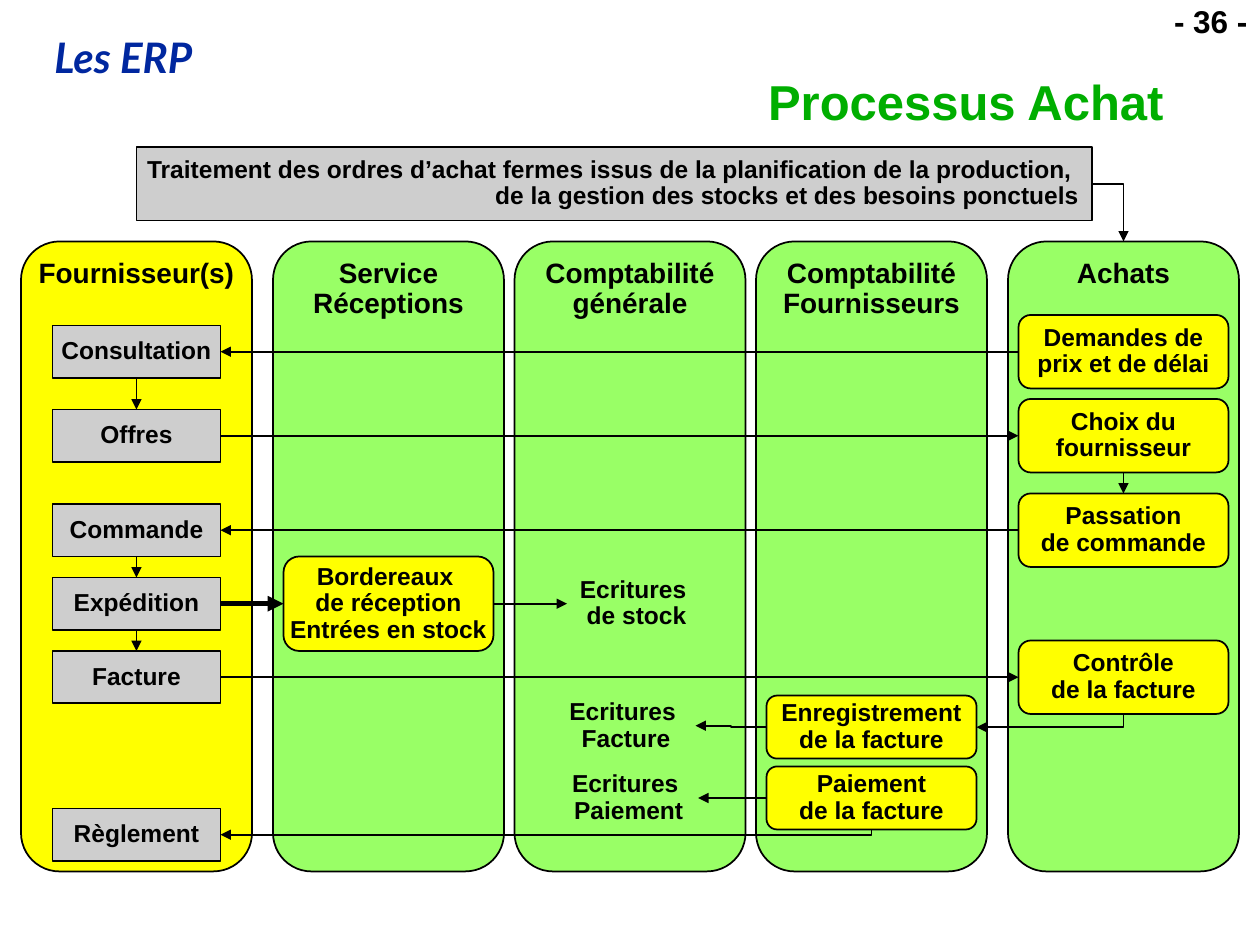
from lxml.etree import SubElement
from pptx import Presentation
from pptx.dml.color import RGBColor
from pptx.enum.shapes import MSO_CONNECTOR as LINK, MSO_SHAPE as SHAPE
from pptx.enum.text import MSO_ANCHOR as ANCHOR, MSO_AUTO_SIZE as AUTO, PP_ALIGN as ALIGN
from pptx.oxml.ns import qn
from pptx.util import Emu, Pt

PX = 9525
BLACK = RGBColor(0x00, 0x00, 0x00)
NAVY = RGBColor(0x00, 0x27, 0x9F)
GREEN = RGBColor(0x00, 0xAE, 0x00)
LIME = RGBColor(0x99, 0xFF, 0x66)
YELLOW = RGBColor(0xFF, 0xFF, 0x00)
GREY = RGBColor(0xCE, 0xCE, 0xCE)
TOP, LEFT, BOTTOM, RIGHT = range(4)

COLUMNS = [
    (16, "Fournisseur(s)", YELLOW),
    (208, "Service\vRéceptions", LIME),
    (392, "Comptabilité\vgénérale", LIME),
    (576, "Comptabilité\vFournisseurs", LIME),
    (768, "Achats", LIME),
]
SUPPLIER_STEPS = [
    ("Consultation", 248), ("Offres", 312), ("Commande", 384),
    ("Expédition", 440), ("Facture", 496), ("Règlement", 616),
]
PURCHASING_STEPS = [
    ("Demandes de\vprix et de délai", 240), ("Choix du\vfournisseur", 304),
    ("Passation\vde commande", 376), ("Contrôle\vde la facture", 488),
]


def px(*lengths):
    return [Emu(length * PX) for length in lengths]


def write(shape, text, size=14, color=BLACK, font="Arial", italic=False,
          align=ALIGN.CENTER, anchor=ANCHOR.MIDDLE, wrap=False):
    frame = shape.text_frame
    frame.text = text
    frame.word_wrap = wrap
    frame.auto_size = AUTO.NONE
    frame.vertical_anchor = anchor
    frame.margin_left, frame.margin_right = Pt(7.2), Pt(7.2)
    frame.margin_top, frame.margin_bottom = Pt(3.6), Pt(3.6)
    for paragraph in frame.paragraphs:
        paragraph.alignment = align
        paragraph.line_spacing = 0.9
        for run in paragraph.runs:
            run.font.name = font
            run.font.size = Pt(size)
            run.font.bold = True
            run.font.italic = italic
            run.font.color.rgb = color


def label(slide, place, text, **style):
    box = slide.shapes.add_textbox(*px(*place))
    write(box, text, **style)
    return box


def block(slide, kind, place, fill, text, **style):
    box = slide.shapes.add_shape(kind, *px(*place))
    box.shadow.inherit = False
    box.fill.solid()
    box.fill.fore_color.rgb = fill
    box.line.color.rgb = BLACK
    box.line.width = Pt(1)
    write(box, text, **style)
    return box


def arrow(slide, source, source_side, target, target_side, kind=LINK.STRAIGHT, width=1):
    link = slide.shapes.add_connector(kind, 0, 0, 0, 0)
    link.begin_connect(source, source_side)
    link.end_connect(target, target_side)
    link.line.color.rgb = BLACK
    link.line.width = Pt(width)
    SubElement(link.line._get_or_add_ln(), qn("a:tailEnd"), type="triangle")
    SubElement(link._element.spPr, qn("a:effectLst"))
    return link


def corner_arrow(slide, source, source_side, target, target_side):
    link = arrow(slide, source, source_side, target, target_side, LINK.ELBOW)
    properties = link._element.spPr
    properties.find(qn("a:prstGeom")).set("prst", "bentConnector2")
    if source_side == BOTTOM:
        across, down = link.width, link.height
        link.left += (across - down) // 2
        link.top += (down - across) // 2
        link.width, link.height = down, across
        frame = properties.find(qn("a:xfrm"))
        frame.attrib.pop("flipH", None)
        frame.set("rot", "5400000")


def main():
    deck = Presentation()
    deck.slide_width, deck.slide_height = px(960, 720)
    slide = deck.slides.add_slide(deck.slide_layouts[5])

    title = slide.shapes.title
    title.left, title.top, title.width, title.height = px(136, 56, 760, 48)
    write(title, "Processus Achat", size=28, color=GREEN, align=ALIGN.RIGHT, wrap=True)
    label(slide, (32, 24, 776, 44), "Les ERP", size=24, color=NAVY, font="Lato",
          italic=True, align=ALIGN.LEFT, anchor=ANCHOR.TOP, wrap=True)
    label(slide, (873, 0, 87, 36), "- 36 -", size=18, align=ALIGN.RIGHT,
          anchor=ANCHOR.TOP, wrap=True)

    columns = [block(slide, SHAPE.ROUNDED_RECTANGLE, (left, 184, 176, 480), fill, name,
                     size=16, anchor=ANCHOR.TOP) for left, name, fill in COLUMNS]
    orders = block(
        slide, SHAPE.RECTANGLE, (104, 112, 728, 56), GREY,
        "Traitement des ordres d’achat fermes issus de la planification de la production, \v"
        "de la gestion des stocks et des besoins ponctuels", align=ALIGN.RIGHT)

    consultation, offers, order, shipping, invoice, settlement = [
        block(slide, SHAPE.RECTANGLE, (40, top, 128, 40), GREY, name)
        for name, top in SUPPLIER_STEPS]
    requests, choice, ordering, check = [
        block(slide, SHAPE.ROUNDED_RECTANGLE, (776, top, 160, 56), YELLOW, name)
        for name, top in PURCHASING_STEPS]
    receipt = block(slide, SHAPE.ROUNDED_RECTANGLE, (216, 424, 160, 72), YELLOW,
                    "Bordereaux \vde réception\nEntrées en stock")
    recording, payment = [
        block(slide, SHAPE.ROUNDED_RECTANGLE, (584, top, 160, 48), YELLOW, name)
        for name, top in [("Enregistrement\vde la facture", 530),
                          ("Paiement\vde la facture", 584)]]
    stock_entry, invoice_entry, payment_entry = [
        label(slide, (left, top, 106, 50), f"Ecritures \n{subject}")
        for left, top, subject in [(432, 435, "de stock"), (424, 528, "Facture"),
                                   (426, 583, "Paiement")]]

    for source, target in [(requests, consultation), (ordering, order)]:
        arrow(slide, source, LEFT, target, RIGHT)
    for source, target in [(offers, choice), (receipt, stock_entry), (invoice, check)]:
        arrow(slide, source, RIGHT, target, LEFT)
    for source, target in [(consultation, offers), (order, shipping),
                           (shipping, invoice), (choice, ordering)]:
        arrow(slide, source, BOTTOM, target, TOP)
    arrow(slide, shipping, RIGHT, receipt, LEFT, width=3)
    for source, target in [(recording, invoice_entry), (payment, payment_entry)]:
        arrow(slide, source, LEFT, target, RIGHT, LINK.ELBOW)
    for source, target in [(check, recording), (payment, settlement)]:
        corner_arrow(slide, source, BOTTOM, target, RIGHT)
    corner_arrow(slide, orders, RIGHT, columns[-1], TOP)

    deck.save("out.pptx")


if __name__ == "__main__":
    main()
